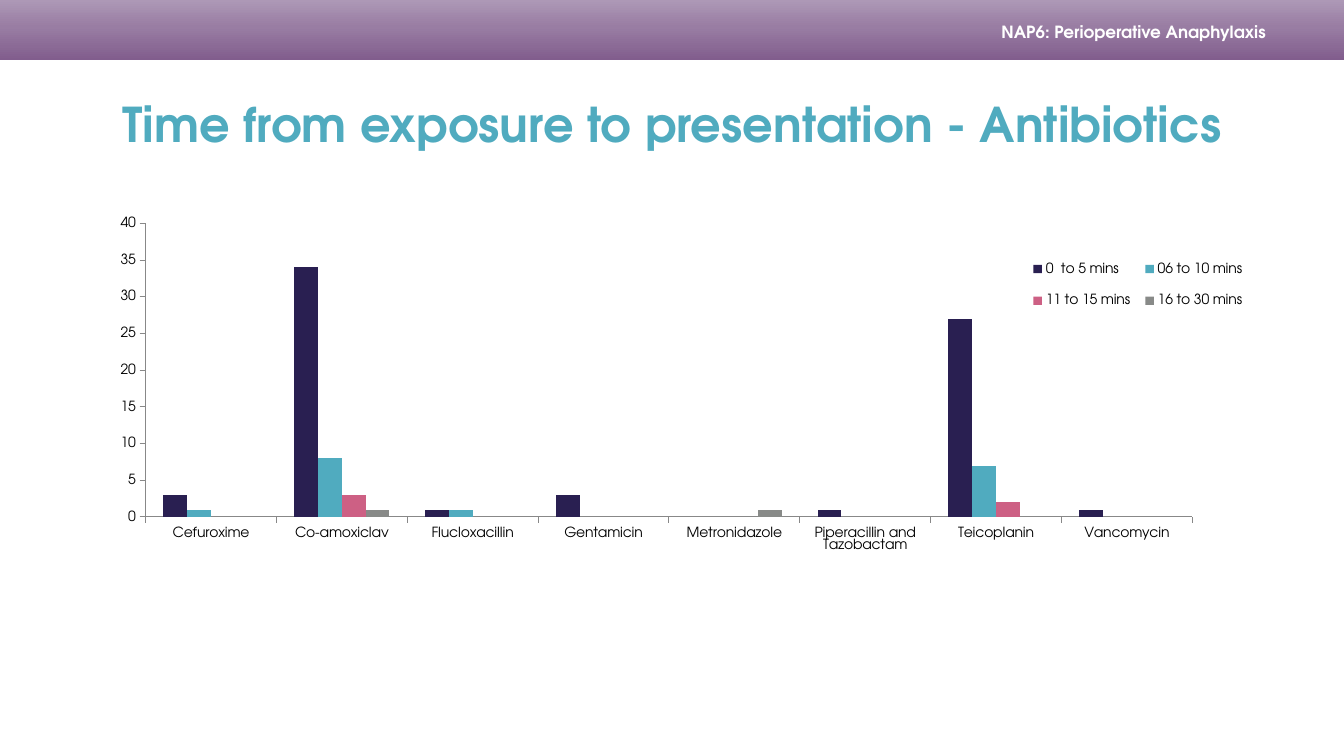
from copy import deepcopy

from lxml import etree
from pptx import Presentation
from pptx.chart.data import CategoryChartData
from pptx.dml.color import RGBColor
from pptx.enum.chart import XL_CHART_TYPE, XL_LEGEND_POSITION, XL_TICK_MARK
from pptx.enum.shapes import MSO_SHAPE
from pptx.enum.text import MSO_ANCHOR, PP_ALIGN
from pptx.oxml.ns import qn
from pptx.util import Pt

CLUSTERED = XL_CHART_TYPE.COLUMN_CLUSTERED
LEGEND_RIGHT = XL_LEGEND_POSITION.RIGHT
TICK_OUT = XL_TICK_MARK.OUTSIDE
RECT = MSO_SHAPE.RECTANGLE
MIDDLE = MSO_ANCHOR.MIDDLE
CENTER, RIGHT = PP_ALIGN.CENTER, PP_ALIGN.RIGHT

# Content
FONT = "TeX Gyre Adventor"
HEADER = "NAP6: Perioperative Anaphylaxis"
TITLE = "Time from exposure to presentation - Antibiotics"
BAND_STOPS = [(0, "815D8D"), (0.55, "997DA3"), (1, "AD98B6")]
ANTIBIOTICS = ["Cefuroxime", "Co-amoxiclav", "Flucloxacillin", "Gentamicin",
               "Metronidazole", "Piperacillin and Tazobactam", "Teicoplanin",
               "Vancomycin"]
SERIES = [
    ("0  to 5 mins", "291F51", (3, 34, 1, 3, None, 1, 27, 1)),
    ("06 to 10 mins", "50ABBF", (1, 8, 1, None, None, None, 7, None)),
    ("11 to 15 mins", "CD6084", (None, 3, None, None, None, None, 2, None)),
    ("16 to 30 mins", "888A88", (None, 1, None, None, 1, None, None, None)),
]

# Layout in px: left, top, width, height
SLIDE = (1344, 756)
BAND = (0, 0, 1344, 60)
HEADER_BOX = (842, 18, 448, 28)
TITLE_BOX = (67, 60, 1210, 126)
CHART_BOX = (67, 207, 1210, 458)
# Shares of the chart: x, y, width, height
PLOT_AREA = (0.065, 0.036, 0.865, 0.641)
LEGEND_AREA = (0.79, 0.08, 0.19, 0.18)


def px(n):
    return round(n * 914400 / 100.8)


def color(hex_code):
    return RGBColor.from_string(hex_code)


def add_text(slide, box, text, size, hex_code, align, margin_right=10):
    tf = slide.shapes.add_textbox(*map(px, box)).text_frame
    tf.word_wrap = True
    tf.vertical_anchor = MIDDLE
    tf.margin_right = px(margin_right)
    p = tf.paragraphs[0]
    p.text = text
    p.alignment = align
    font = p.runs[0].font
    font.name, font.size, font.bold = FONT, Pt(size), True
    font.color.rgb = color(hex_code)


def set_layout(element, area, before, inner=False):
    """Place a chart part by hand, ahead of the first child named in before."""
    for old in element.findall(qn("c:layout")):
        element.remove(old)
    layout = etree.Element(qn("c:layout"))
    manual = etree.SubElement(layout, qn("c:manualLayout"))
    values = [("layoutTarget", "inner")] if inner else []
    values += [("xMode", "edge"), ("yMode", "edge")]
    values += zip("xywh", area)
    for tag, value in values:
        etree.SubElement(manual, qn("c:" + tag)).set("val", str(value))
    next(e for e in element if e.tag == qn(before)).addprevious(layout)


prs = Presentation()
prs.slide_width, prs.slide_height = map(px, SLIDE)
slide = prs.slides.add_slide(prs.slide_layouts[6])

# Header band
sp = slide.shapes.add_shape(RECT, *map(px, BAND))
sp.shadow.inherit = False
sp.line.fill.background()
sp.fill.gradient()
sp.fill.gradient_angle = 90
last = sp.fill.gradient_stops[1]._gs
last.addprevious(deepcopy(last))
for stop, (position, hex_code) in zip(sp.fill.gradient_stops, BAND_STOPS):
    stop.position = position
    stop.color.rgb = color(hex_code)

# Header and title
add_text(slide, HEADER_BOX, HEADER, 12, "FFFFFF", RIGHT, margin_right=24)
add_text(slide, TITLE_BOX, TITLE, 34.2, "50ABBF", CENTER)

# Chart
data = CategoryChartData()
data.categories = ANTIBIOTICS
for name, _, values in SERIES:
    data.add_series(name, values)
chart = slide.shapes.add_chart(CLUSTERED, *map(px, CHART_BOX), data).chart
chart.has_title = False
chart.font.name, chart.font.size = FONT, Pt(10)
chart.font.color.rgb = color("000000")

plot = chart.plots[0]
plot.gap_width, plot.overlap = 150, 0
plot.vary_by_categories = False
for series, (_, hex_code, _) in zip(plot.series, SERIES):
    series.format.fill.solid()
    series.format.fill.fore_color.rgb = color(hex_code)

# Axes
for axis in (chart.category_axis, chart.value_axis):
    axis.has_major_gridlines = False
    axis.major_tick_mark = TICK_OUT
    axis.format.line.color.rgb = color("888888")
    axis.format.line.width = Pt(0.75)
value_axis = chart.value_axis
value_axis.minimum_scale, value_axis.maximum_scale = 0, 40
value_axis.major_unit = 5

# Legend and plot positions
chart.has_legend = True
legend = chart.legend
legend.position = LEGEND_RIGHT
legend.include_in_layout = False
set_layout(legend._element, LEGEND_AREA, "c:overlay")
set_layout(plot._element.getparent(), PLOT_AREA, "c:barChart", inner=True)

prs.save("out.pptx")
